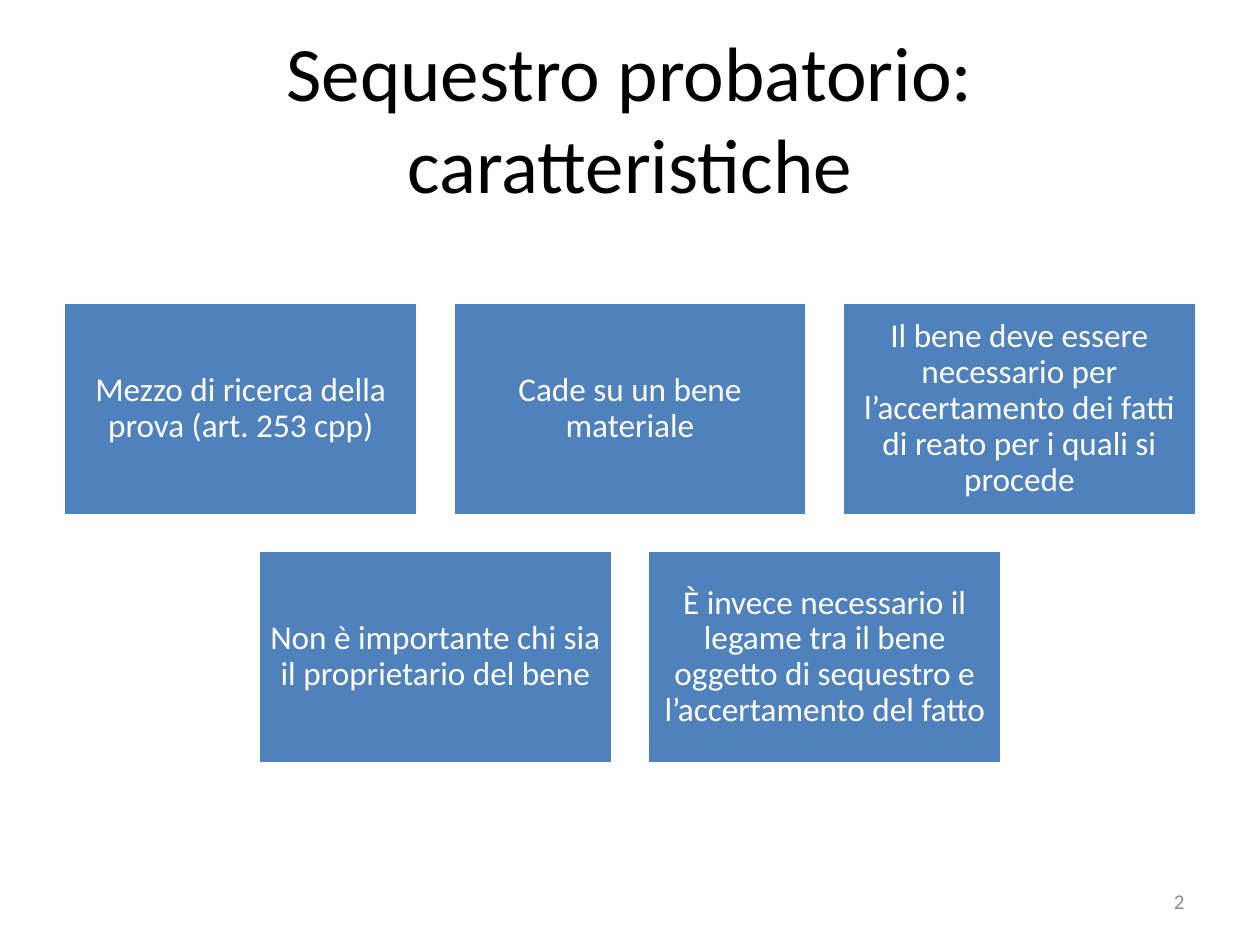
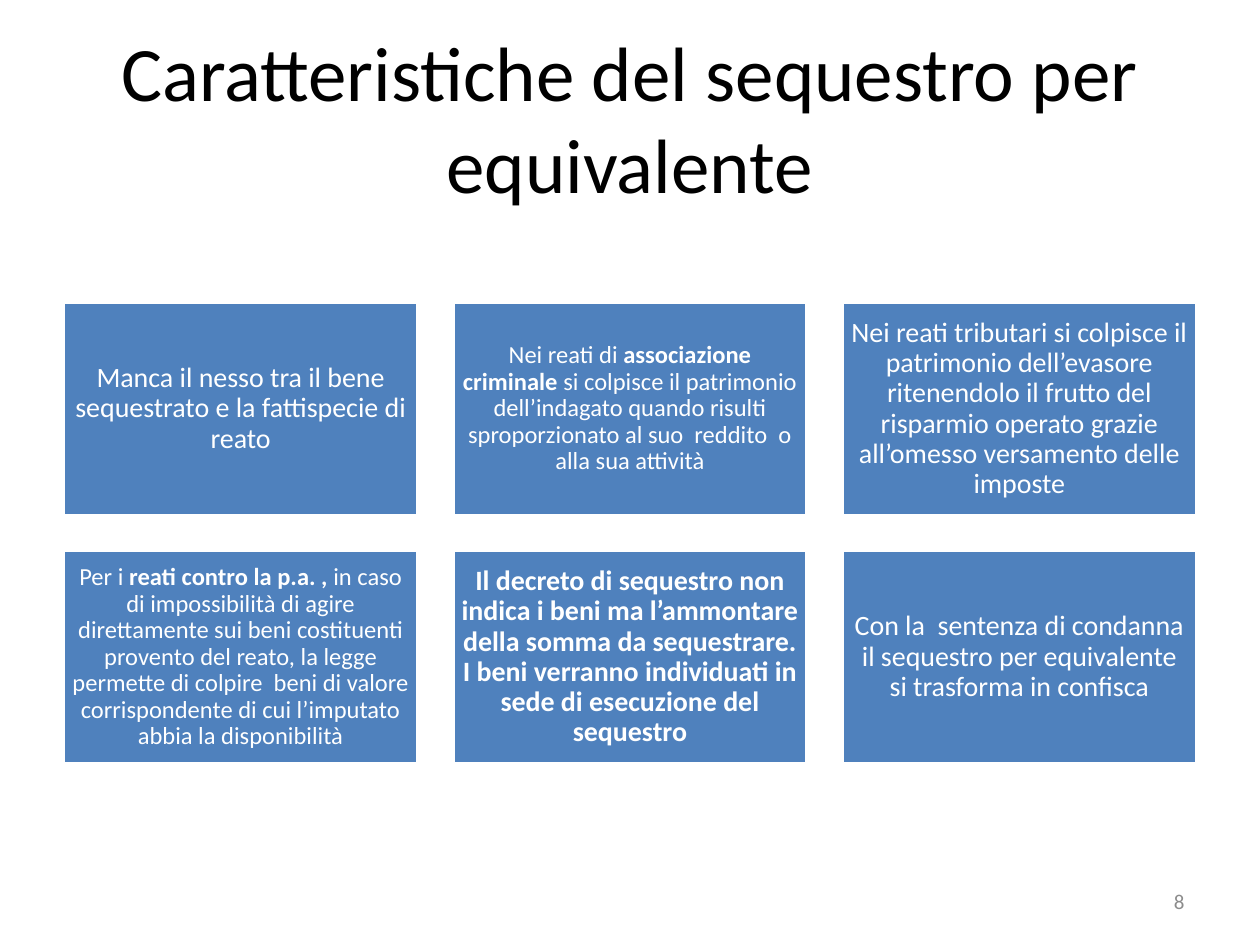
from pptx import Presentation
from pptx.dml.color import RGBColor
from pptx.enum.shapes import MSO_SHAPE
from pptx.enum.text import MSO_ANCHOR, PP_ALIGN
from pptx.util import Inches, Pt

RECTANGLE = MSO_SHAPE.RECTANGLE
MIDDLE = MSO_ANCHOR.MIDDLE
CENTER, RIGHT = PP_ALIGN.CENTER, PP_ALIGN.RIGHT

# Each card is (text size, spans); each span is (text, bold).
SLIDES = [
    {
        "title": "Sequestro probatorio: caratteristiche",
        "number": "2",
        "cards": [
            (19, [("Mezzo di ricerca della prova (art. 253 cpp)", False)]),
            (19, [("Cade su un bene materiale", False)]),
            (19, [("Il bene deve essere necessario per l’accertamento dei fatti "
                   "di reato per i quali si procede", False)]),
            (19, [("Non è importante chi sia il proprietario del bene", False)]),
            (19, [("È invece necessario il legame tra il bene oggetto di "
                   "sequestro e l’accertamento del fatto", False)]),
        ],
    },
    {
        "title": "Caratteristiche del sequestro per equivalente",
        "number": "8",
        "cards": [
            (16, [("Manca il nesso tra il bene sequestrato e la fattispecie "
                   "di reato", False)]),
            (14, [("Nei reati di ", False),
                  ("associazione criminale ", True),
                  ("si colpisce il patrimonio dell’indagato quando risulti "
                   "sproporzionato al suo  reddito  o alla sua attività", False)]),
            (16, [("Nei reati tributari si colpisce il patrimonio dell’evasore "
                   "ritenendolo il frutto del risparmio operato grazie "
                   "all’omesso versamento delle imposte", False)]),
            (14, [("Per i ", False),
                  ("reati contro la p.a. ,", True),
                  (" in caso di impossibilità di agire direttamente sui beni "
                   "costituenti provento del reato, la legge permette di colpire  "
                   "beni di valore corrispondente di cui l’imputato abbia la "
                   "disponibilità", False)]),
            (16, [("Il decreto di sequestro non indica i beni ma l’ammontare "
                   "della somma da sequestrare. I beni verranno individuati in "
                   "sede di esecuzione del sequestro", True)]),
            (16, [("Con la  sentenza di condanna il sequestro per equivalente "
                   "si trasforma in confisca", False)]),
        ],
    },
]

FONT = "Calibri"
BLACK = RGBColor(0x00, 0x00, 0x00)
WHITE = RGBColor(0xFF, 0xFF, 0xFF)
BLUE = RGBColor(0x4F, 0x81, 0xBD)
GRAY = RGBColor(0x8C, 0x8C, 0x8C)

PAGE_WIDTH, PAGE_HEIGHT = 10, 7.5
TITLE_AREA = (0.5, 0.3, 9, 1.25)
NUMBER_AREA = (7.17, 6.95, 2.33, 0.4)
COLUMNS = 3
CARD_WIDTH, CARD_HEIGHT = 2.81, 1.69
CARD_GAP = 0.28
CARDS_TOP = 2.4
INSET_PER_POINT = 1 / 240  # card margins grow with the text size


def write(shape, spans, size, color, align, spacing=None):
    frame = shape.text_frame
    frame.word_wrap = True
    frame.vertical_anchor = MIDDLE
    para = frame.paragraphs[0]
    para.alignment = align
    para.line_spacing = spacing
    for text, bold in spans:
        span = para.add_run()
        span.text = text
        look = {"name": FONT, "size": Pt(size), "bold": bold}
        for name, value in look.items():
            setattr(span.font, name, value)
        span.font.color.rgb = color


def add_label(page, area, text, size, color, align):
    box = page.shapes.add_textbox(*map(Inches, area))
    write(box, [(text, False)], size, color, align)


def add_card(page, left, top, size, spans):
    area = (left, top, CARD_WIDTH, CARD_HEIGHT)
    card = page.shapes.add_shape(RECTANGLE, *map(Inches, area))
    card.shadow.inherit = False
    card.fill.solid()
    card.fill.fore_color.rgb = BLUE
    card.line.color.rgb = WHITE
    card.line.width = Pt(2)
    for side in ("left", "top", "right", "bottom"):
        setattr(card.text_frame, f"margin_{side}", Inches(size * INSET_PER_POINT))
    write(card, spans, size, WHITE, CENTER, spacing=0.9)


def add_card_grid(page, cards):
    """Fill rows of three; a shorter last row is centred on the page."""
    for start in range(0, len(cards), COLUMNS):
        row = cards[start:start + COLUMNS]
        row_width = len(row) * (CARD_WIDTH + CARD_GAP) - CARD_GAP
        row_left = (PAGE_WIDTH - row_width) / 2
        top = CARDS_TOP + start // COLUMNS * (CARD_HEIGHT + CARD_GAP)
        for column, (size, spans) in enumerate(row):
            left = row_left + column * (CARD_WIDTH + CARD_GAP)
            add_card(page, left, top, size, spans)


def main():
    deck = Presentation()
    deck.slide_width, deck.slide_height = Inches(PAGE_WIDTH), Inches(PAGE_HEIGHT)
    blank = deck.slide_layouts[6]
    for content in SLIDES:
        page = deck.slides.add_slide(blank)
        add_label(page, TITLE_AREA, content["title"], 44, BLACK, CENTER)
        add_card_grid(page, content["cards"])
        add_label(page, NUMBER_AREA, content["number"], 12, GRAY, RIGHT)
    deck.save("out.pptx")


if __name__ == "__main__":
    main()
